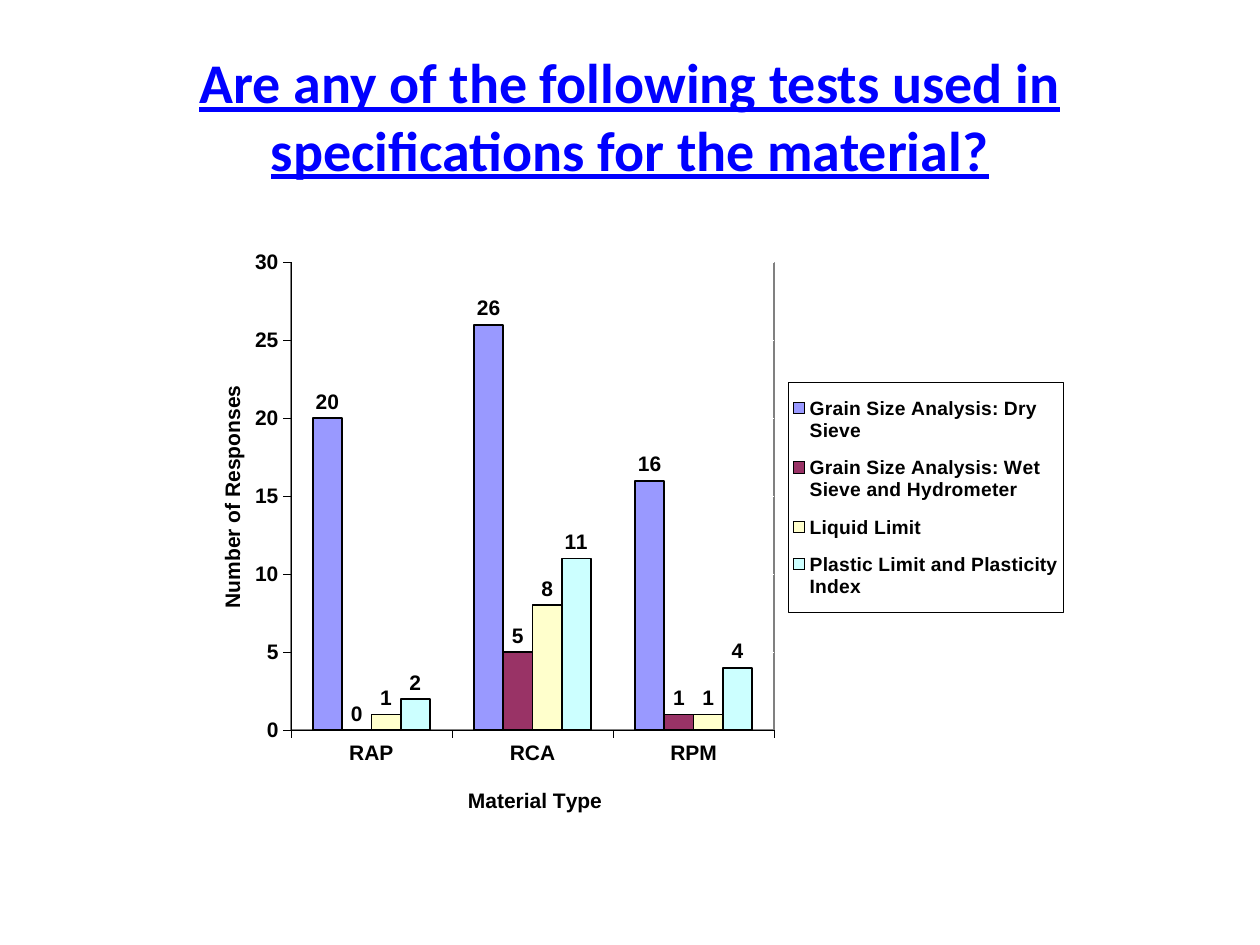
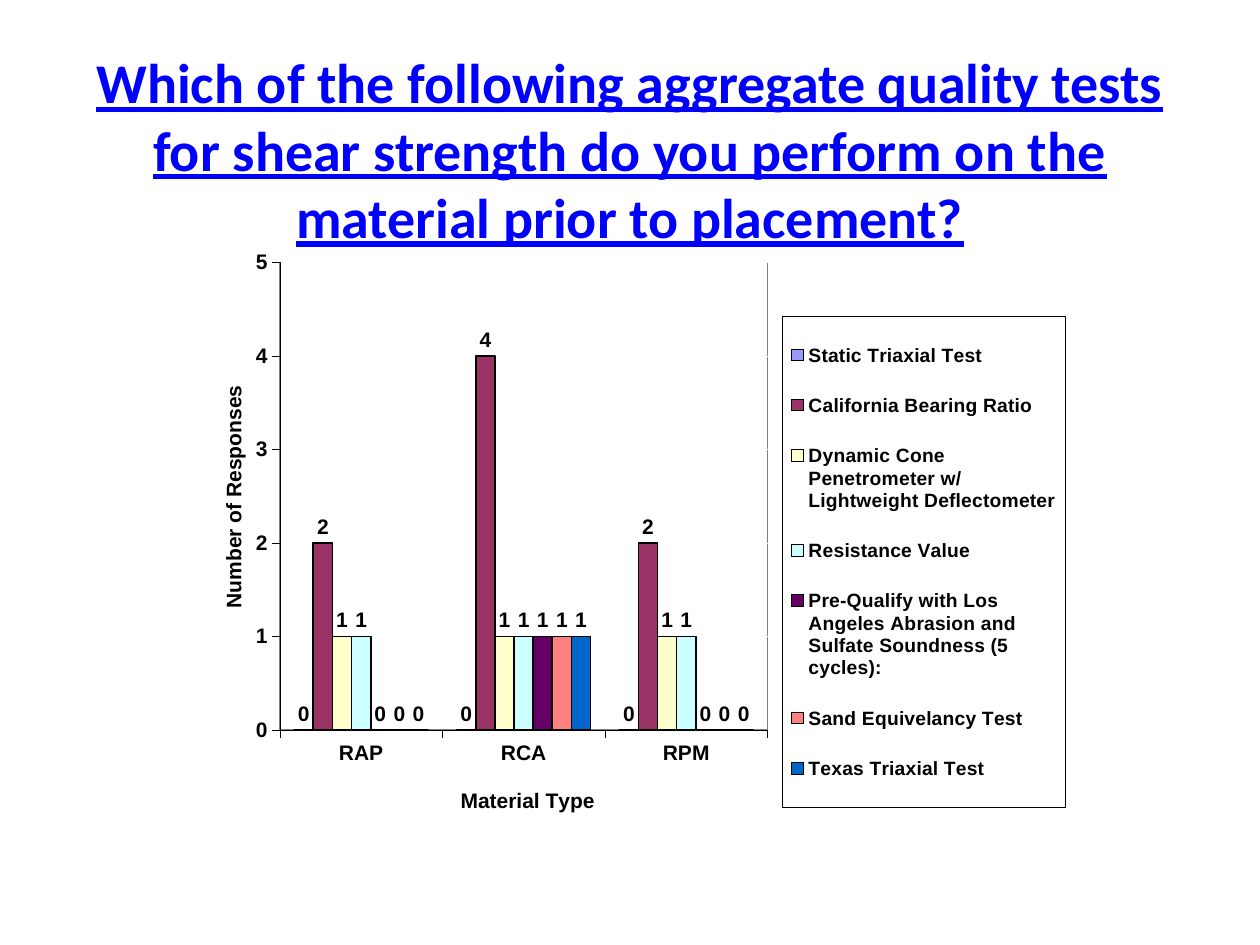
from dataclasses import dataclass
from lxml import etree
from pptx import Presentation
from pptx.chart.data import CategoryChartData
from pptx.dml.color import RGBColor
from pptx.enum.chart import (XL_CHART_TYPE, XL_LABEL_POSITION,
                             XL_LEGEND_POSITION, XL_TICK_MARK)
from pptx.enum.text import MSO_ANCHOR, PP_ALIGN
from pptx.util import Inches, Pt

COLUMNS = XL_CHART_TYPE.COLUMN_CLUSTERED
ABOVE = XL_LABEL_POSITION.OUTSIDE_END
RIGHT = XL_LEGEND_POSITION.RIGHT
OUT, NONE = XL_TICK_MARK.OUTSIDE, XL_TICK_MARK.NONE
TOP, CENTER = MSO_ANCHOR.TOP, PP_ALIGN.CENTER


@dataclass(frozen=True)
class Theme:
    head_font: str = "Calibri"
    body_font: str = "Arial"
    head_size: int = 32
    body_size: int = 12
    key_size: int = 11
    head: str = "0000FF"
    ink: str = "000000"
    paper: str = "FFFFFF"
    frame: str = "808080"
    bars: tuple = ("9999FF", "993366", "FFFFCC", "CCFFFF",
                   "660066", "FF8080", "0066CC")


THEME = Theme()

# Content: frames are shares of the chart (left, top, width, height)
GROUPS = ("RAP", "RCA", "RPM")
X_NAME, Y_NAME = "Material Type", "Number of Responses"
SLIDES = [
    dict(
        title="Are any of the following tests used in specifications "
              "for the material?",
        rows=[
            ("Grain Size Analysis: Dry Sieve", (20, 26, 16)),
            ("Grain Size Analysis: Wet Sieve and Hydrometer", (0, 5, 1)),
            ("Liquid Limit", (1, 8, 1)),
            ("Plastic Limit and Plasticity Index", (2, 11, 4)),
        ],
        top=30, step=5, left=1.53,
        plot=(0.112, 0.051, 0.552, 0.78), key=(0.68, 0.25, 0.314, 0.385),
        x_spot=(0.31, 0.92),
    ),
    dict(
        title="Which of the following aggregate quality tests for shear "
              "strength do you perform on the material prior to placement?",
        rows=[
            ("Static Triaxial Test", (0, 0, 0)),
            ("California Bearing Ratio", (2, 4, 2)),
            ("Dynamic Cone Penetrometer w/ Lightweight Deflectometer",
             (1, 1, 1)),
            ("Resistance Value", (1, 1, 1)),
            ("Pre-Qualify with Los Angeles Abrasion and Sulfate Soundness "
             "(5 cycles):", (0, 1, 0)),
            ("Sand Equivelancy Test", (0, 1, 0)),
            ("Texas Triaxial Test", (0, 1, 0)),
        ],
        top=5, step=1, left=1.54,
        plot=(0.098, 0.051, 0.557, 0.78), key=(0.672, 0.14, 0.323, 0.82),
        x_spot=(0.3, 0.92),
    ),
]
Y_SPOT = (0.026, 0.25)

C = "http://schemas.openxmlformats.org/drawingml/2006/chart"
A = "http://schemas.openxmlformats.org/drawingml/2006/main"


def tag(name):
    return f"{{{C}}}{name}"


def place(node, frame, inner=False):
    """Give a chart part a fixed frame in shares of the chart."""
    for old in node.findall(tag("layout")):
        node.remove(old)
    box = etree.Element(tag("layout"))
    man = etree.SubElement(box, tag("manualLayout"))
    pairs = [("layoutTarget", "inner")] if inner else []
    pairs += [("xMode", "edge"), ("yMode", "edge"), *zip("xywh", frame)]
    for name, val in pairs:
        etree.SubElement(man, tag(name)).set("val", str(val))
    mark = node.find(tag("overlay"))
    if mark is None:
        node.insert(0, box)
    else:
        mark.addprevious(box)


def edge(color, width):
    """Shape style with an outline and no fill."""
    return etree.fromstring(
        f'<c:spPr xmlns:c="{C}" xmlns:a="{A}"><a:noFill/>'
        f'<a:ln w="{Pt(width)}"><a:solidFill><a:srgbClr val="{color}"/>'
        '</a:solidFill></a:ln></c:spPr>')


def style(font, size, color=THEME.ink, face=THEME.body_font):
    font.name, font.size, font.bold = face, Pt(size), True
    font.color.rgb = RGBColor.from_string(color)


def stroke(line, color, width):
    line.color.rgb = RGBColor.from_string(color)
    line.width = Pt(width)


def add_title(slide, text):
    box = slide.shapes.add_textbox(Inches(0.5), Inches(0.3),
                                   Inches(9), Inches(1.25))
    frame = box.text_frame
    frame.word_wrap = True
    frame.vertical_anchor = TOP
    frame.margin_top = Inches(0.08)
    para = frame.paragraphs[0]
    para.text, para.alignment = text, CENTER
    style(para.font, THEME.head_size, THEME.head, THEME.head_font)
    para.font.underline = True


def set_axis(axis, name, spot):
    axis.major_tick_mark, axis.minor_tick_mark = OUT, NONE
    stroke(axis.format.line, THEME.ink, 0.25)
    style(axis.tick_labels.font, THEME.body_size)
    frame = axis.axis_title.text_frame
    frame.text = name
    style(frame.paragraphs[0].font, THEME.body_size)
    place(axis.axis_title._element, spot)
    return frame


def add_chart(slide, page):
    data = CategoryChartData()
    data.categories = GROUPS
    for name, vals in page["rows"]:
        data.add_series(name, vals)
    chart = slide.shapes.add_chart(
        COLUMNS, Inches(page["left"]), Inches(1.84),
        Inches(6.95), Inches(4.76), data).chart
    chart.has_title = False
    style(chart.font, THEME.body_size)

    # Bars and their values
    plot = chart.plots[0]
    plot.gap_width, plot.overlap, plot.vary_by_categories = 150, 0, False
    for bar, color in zip(plot.series, THEME.bars):
        bar.invert_if_negative = False
        bar.format.fill.solid()
        bar.format.fill.fore_color.rgb = RGBColor.from_string(color)
        stroke(bar.format.line, THEME.ink, 1)
        tips = bar.data_labels
        tips.show_value, tips.position = True, ABOVE
        style(tips.font, THEME.body_size)

    # Axes
    set_axis(chart.category_axis, X_NAME, page["x_spot"])
    axis = chart.value_axis
    side = set_axis(axis, Y_NAME, Y_SPOT)
    side._txBody.bodyPr.set("rot", "-5400000")
    axis.minimum_scale, axis.maximum_scale = 0, page["top"]
    axis.major_unit = page["step"]
    axis.has_major_gridlines = True
    stroke(axis.major_gridlines.format.line, THEME.paper, 0.25)

    # Plot frame and legend
    area = chart._chartSpace.find(f".//{tag('plotArea')}")
    place(area, page["plot"], inner=True)
    area.append(edge(THEME.frame, 1))
    chart.has_legend = True
    key = chart.legend
    key.position, key.include_in_layout = RIGHT, False
    style(key.font, THEME.key_size)
    place(key._element, page["key"])
    key._element.find(tag("overlay")).addnext(edge(THEME.ink, 0.25))


def main():
    deck = Presentation()
    deck.slide_width, deck.slide_height = Inches(10), Inches(7.5)
    for page in SLIDES:
        slide = deck.slides.add_slide(deck.slide_layouts[6])
        add_title(slide, page["title"])
        add_chart(slide, page)
    deck.save("out.pptx")


if __name__ == "__main__":
    main()
